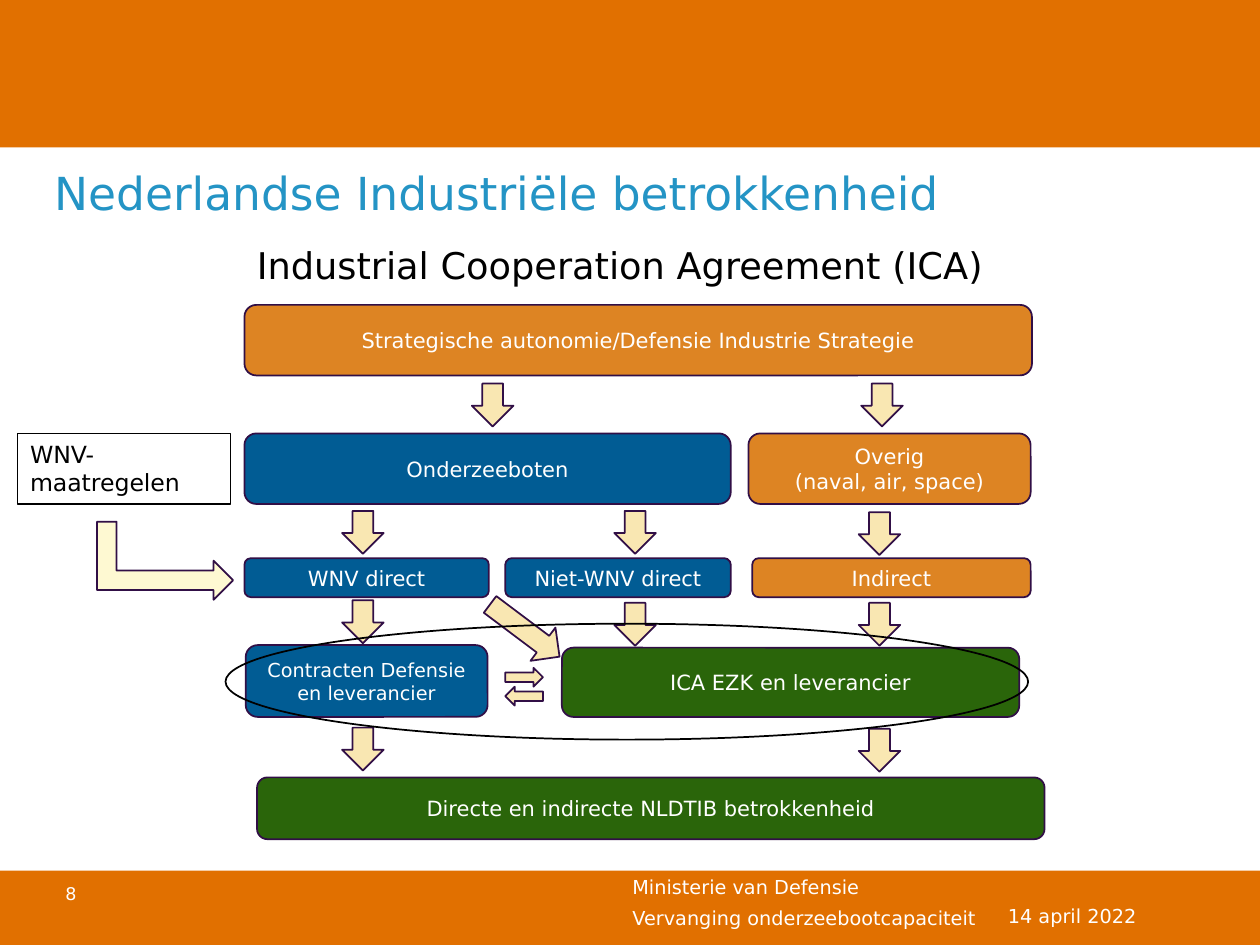
from lxml.etree import SubElement
from pptx import Presentation
from pptx.dml.color import RGBColor
from pptx.enum.shapes import MSO_SHAPE
from pptx.enum.text import MSO_ANCHOR, PP_ALIGN
from pptx.oxml.ns import qn
from pptx.util import Pt

PX = 9144
FONT = "DejaVu Sans"
COLORS = {
    "band": "E17000", "title": "2494C5", "white": "FFFFFF", "black": "000000",
    "blue": "015C94", "orange": "DD8423", "green": "2A650A", "outline": "310F46",
    "arrow": "F6D67B", "cream": "FEF9D2",
}

deck = Presentation()
deck.slide_width, deck.slide_height = 1000 * PX, 750 * PX
page = deck.slides.add_slide(deck.slide_layouts[6])


def add_shape(kind, left, top, width, height, fill=None, line=None, weight=1):
    shape = page.shapes.add_shape(kind, left * PX, top * PX, width * PX, height * PX)
    shape.shadow.inherit = False
    if fill:
        shape.fill.solid()
        shape.fill.fore_color.rgb = RGBColor.from_string(COLORS[fill])
    else:
        shape.fill.background()
    if line:
        shape.line.color.rgb = RGBColor.from_string(COLORS[line])
        shape.line.width = Pt(weight)
    else:
        shape.line.fill.background()
    return shape


def write(box, text, size, color, align=PP_ALIGN.LEFT, anchor=MSO_ANCHOR.TOP):
    frame = box.text_frame
    frame.word_wrap = True
    frame.vertical_anchor = anchor
    frame.text = text
    for para in frame.paragraphs:
        para.alignment = align
        for span in para.runs:
            span.font.name = FONT
            span.font.size = Pt(size)
            span.font.color.rgb = RGBColor.from_string(COLORS[color])


for top, height in [(691, 59), (0, 117)]:
    add_shape(MSO_SHAPE.RECTANGLE, 0, top, 1000, height, "band")

labels = [
    ("Ministerie van Defensie", 492, 690, 455, 31, 11, "white", MSO_ANCHOR.TOP),
    ("8", 42, 696, 78, 40, 10, "white", MSO_ANCHOR.TOP),
    ("Vervanging onderzeebootcapaciteit", 492, 714, 299, 24, 11, "white", MSO_ANCHOR.TOP),
    ("14 april 2022", 790, 707, 182, 40, 11, "white", MSO_ANCHOR.MIDDLE),
    ("Industrial Cooperation Agreement (ICA)", 194, 188, 643, 45, 21, "black", MSO_ANCHOR.TOP),
]
for text, left, top, width, height, size, color, anchor in labels:
    box = page.shapes.add_textbox(left * PX, top * PX, width * PX, height * PX)
    write(box, text, size, color, anchor=anchor)

title = page.shapes.add_textbox(43 * PX, 131 * PX, 945 * PX, 44 * PX)
write(title, "Nederlandse Industriële betrokkenheid", 26, "title")
frame = title.text_frame
frame.margin_left = frame.margin_top = frame.margin_right = frame.margin_bottom = 0

blocks = [
    ("Strategische autonomie/Defensie Industrie Strategie", 194, 242, 625, 56, "orange", 12),
    ("Onderzeeboten", 194, 344, 386, 56, "blue", 12),
    ("Overig\n(naval, air, space)", 594, 344, 224, 56, "orange", 12),
    ("WNV direct", 194, 443, 194, 31, "blue", 12),
    ("Niet-WNV direct", 401, 443, 179, 31, "blue", 12),
    ("Indirect", 597, 443, 221, 31, "orange", 12),
    ("Contracten Defensie en leverancier", 195, 512, 192, 57, "blue", 11),
    ("ICA EZK en leverancier", 446, 514, 363, 55, "green", 12),
    ("Directe en indirecte NLDTIB betrokkenheid", 204, 617, 625, 49, "green", 12),
]
for text, left, top, width, height, fill, size in blocks:
    block = add_shape(MSO_SHAPE.ROUNDED_RECTANGLE, left, top, width, height, fill, "outline")
    write(block, text, size, "white", PP_ALIGN.CENTER, MSO_ANCHOR.MIDDLE)

down_arrows = [
    (374, 305), (683, 305),
    (271, 406), (487, 406), (681, 407),
    (271, 477), (487, 479), (681, 479),
    (271, 578), (681, 579),
]
arrows = [(left, top, 34, 33, 90) for left, top in down_arrows]
arrows += [(382, 484, 69, 33, 36.9), (401, 530, 30, 15, 0), (401, 545, 30, 15, 180)]
for left, top, width, height, rotation in arrows:
    arrow = add_shape(MSO_SHAPE.RIGHT_ARROW, left, top, width, height, "arrow", "outline")
    arrow.rotation = rotation
    color = arrow.fill._xPr.find(qn("a:solidFill")).find(qn("a:srgbClr"))
    SubElement(color, qn("a:alpha"), val="58000")

bent_arrow = add_shape(MSO_SHAPE.BENT_UP_ARROW, 100, 391, 62, 108, "cream", "outline")
bent_arrow.rotation = 90

measures = add_shape(MSO_SHAPE.RECTANGLE, 14, 344, 169, 56, None, "black", 0.75)
write(measures, "WNV-maatregelen", 13.5, "black")

add_shape(MSO_SHAPE.OVAL, 179, 495, 637, 92, None, "black")

deck.save("out.pptx")
